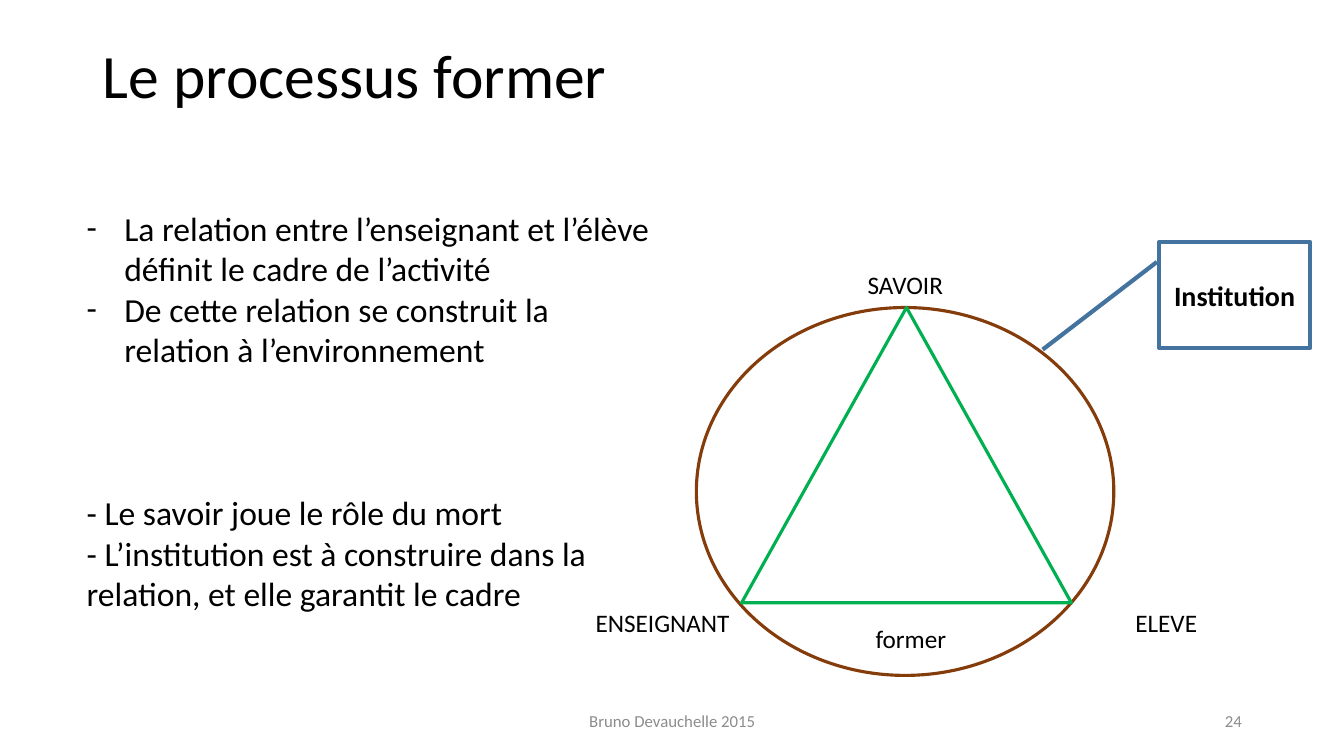
from lxml.etree import SubElement
from pptx import Presentation
from pptx.dml.color import RGBColor
from pptx.enum.shapes import MSO_SHAPE
from pptx.enum.text import MSO_ANCHOR, MSO_AUTO_SIZE, PP_ALIGN
from pptx.oxml.ns import qn
from pptx.util import Cm, Pt

BLACK = RGBColor(0x00, 0x00, 0x00)
WHITE = RGBColor(0xFF, 0xFF, 0xFF)
GREY = RGBColor(0x8C, 0x8C, 0x8C)
BROWN = RGBColor(0x84, 0x3C, 0x0B)
GREEN = RGBColor(0x00, 0xB0, 0x50)
BLUE = RGBColor(0x43, 0x73, 0x9E)
FONT = "Calibri"
LEFT, CENTER, RIGHT = PP_ALIGN.LEFT, PP_ALIGN.CENTER, PP_ALIGN.RIGHT
TOP, MIDDLE = MSO_ANCHOR.TOP, MSO_ANCHOR.MIDDLE

TITLE = "Le processus former"
# text, has a hanging dash, space before in points
POINTS = [
    ("La relation entre l’enseignant et l’élève définit le cadre de l’activité", True, 0),
    ("De cette relation se construit la relation à l’environnement", True, 0),
    ("- Le savoir joue le rôle du mort", False, 88),
    ("- L’institution est à construire dans la relation, et elle garantit le cadre", False, 0),
]
# kind, box in cm (left, top, width, height), line colour, line width in points
SHAPES = [
    (MSO_SHAPE.OVAL, (17.55, 7.75, 10.52, 9.27), BROWN, 2.25),
    (MSO_SHAPE.ISOSCELES_TRIANGLE, (18.69, 7.75, 8.31, 7.44), GREEN, 2.25),
    (MSO_SHAPE.LINE_CALLOUT_1, (29.21, 6.1, 3.81, 2.67), BLUE, 3),
]
CALLOUT_LINE = (0.188, -0.014, 1.015, -0.77)
# text, box in cm, alignment, anchor, size in points, colour
LABELS = [
    ("SAVOIR", (20.68, 6.65, 4.27, 0.76), CENTER, TOP, 18, BLACK),
    ("ELEVE", (27.74, 15.19, 3.3, 0.76), CENTER, TOP, 18, BLACK),
    ("ENSEIGNANT", (14.76, 15.19, 4.2, 0.76), LEFT, TOP, 18, BLACK),
    ("former", (21.01, 15.57, 3.89, 0.76), CENTER, TOP, 18, BLACK),
    ("Bruno Devauchelle 2015", (11.23, 17.65, 11.43, 1.02), CENTER, MIDDLE, 12, GREY),
    ("24", (23.93, 17.65, 7.62, 1.02), RIGHT, MIDDLE, 12, GREY),
]


def cm_box(box):
    return [Cm(value) for value in box]


def place(sp, box):
    sp.left, sp.top, sp.width, sp.height = cm_box(box)


def set_frame(tf, anchor):
    tf.word_wrap = True
    tf.auto_size = MSO_AUTO_SIZE.NONE
    tf.vertical_anchor = anchor


def write(p, text, size, color=BLACK, align=LEFT, bold=False):
    p.alignment = align
    r = p.add_run()
    r.text = text
    r.font.name, r.font.size, r.font.bold = FONT, Pt(size), bold
    r.font.color.rgb = color


def set_bullet(p, dash):
    pPr = p._p.get_or_add_pPr()
    indent = Cm(0.95) if dash else 0
    pPr.set("marL", str(indent))
    pPr.set("indent", str(-indent))
    if dash:
        SubElement(pPr, qn("a:buFont"), typeface=FONT)
        SubElement(pPr, qn("a:buChar"), char="-")
    else:
        SubElement(pPr, qn("a:buNone"))


prs = Presentation()
prs.slide_width, prs.slide_height = Cm(33.87), Cm(19.05)
slide = prs.slides.add_slide(prs.slide_layouts[1])
title, body = slide.shapes.title, slide.placeholders[1]

place(title, (2.34, 1.02, 29.21, 2.39))
set_frame(title.text_frame, TOP)
p = title.text_frame.paragraphs[0]
p.line_spacing = 0.9
write(p, TITLE, 44)

place(body, (1.93, 5.11, 14.88, 10.52))
tf = body.text_frame
set_frame(tf, TOP)
for i, (text, dash, before) in enumerate(POINTS):
    p = tf.add_paragraph() if i else tf.paragraphs[0]
    set_bullet(p, dash)
    p.space_before = Pt(before)
    p.line_spacing = 1.0
    write(p, text, 24)

for kind, box, color, width in SHAPES:
    sp = slide.shapes.add_shape(kind, *cm_box(box))
    sp.shadow.inherit = False
    sp.fill.solid()
    sp.fill.fore_color.rgb = WHITE
    sp.line.color.rgb = color
    sp.line.width = Pt(width)
    if kind == MSO_SHAPE.LINE_CALLOUT_1:
        for i, value in enumerate(CALLOUT_LINE):
            sp.adjustments[i] = value
        set_frame(sp.text_frame, MIDDLE)
        write(sp.text_frame.paragraphs[0], "Institution", 20, align=CENTER, bold=True)

for text, box, align, anchor, size, color in LABELS:
    tf = slide.shapes.add_textbox(*cm_box(box)).text_frame
    set_frame(tf, anchor)
    write(tf.paragraphs[0], text, size, color, align)

prs.save("out.pptx")
